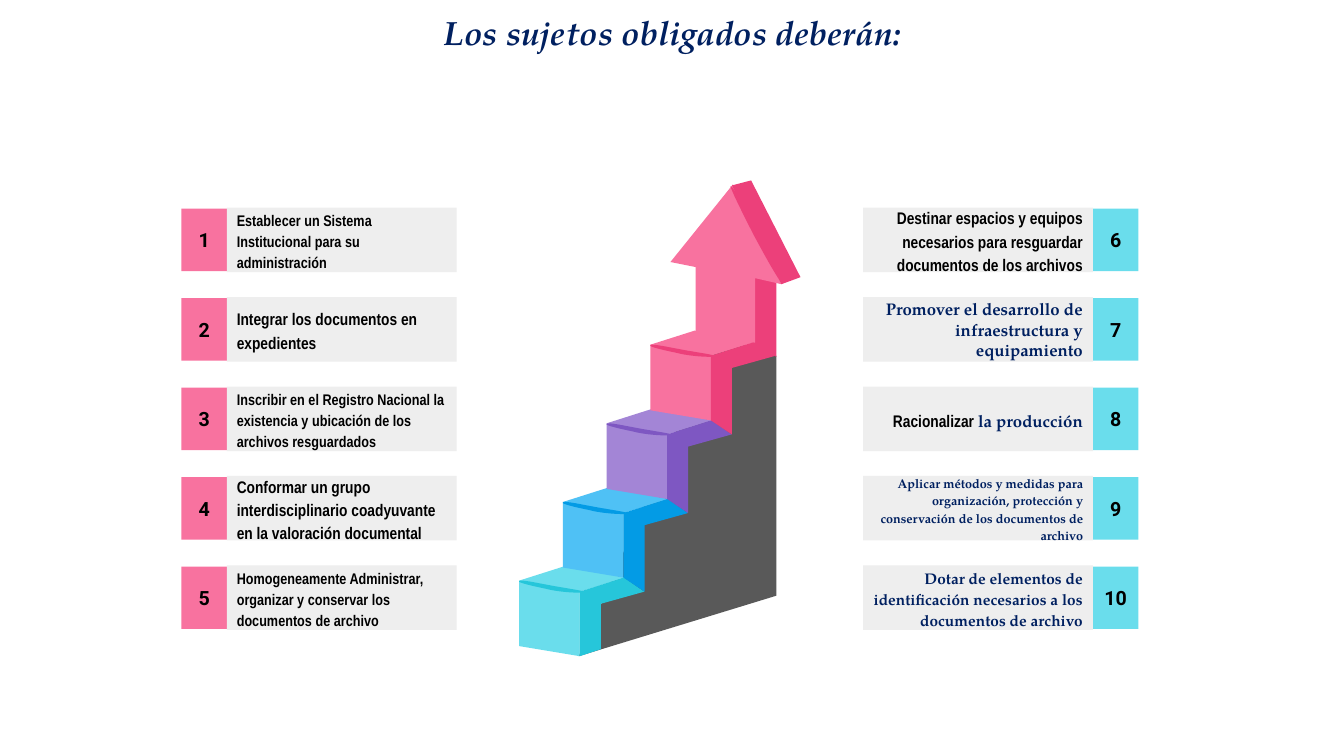
"""Build a slide with ten duties listed on both sides of a rising staircase."""
from pptx import Presentation
from pptx.dml.color import RGBColor
from pptx.enum.shapes import MSO_SHAPE as Preset
from pptx.enum.text import MSO_ANCHOR as Anchor, PP_ALIGN as Align
from pptx.util import Inches, Pt

BLACK = RGBColor(0x00, 0x00, 0x00)
NAVY = RGBColor(0x00, 0x20, 0x60)
PANEL = RGBColor(0xEE, 0xEE, 0xEE)
SHADE = RGBColor(0x59, 0x59, 0x59)
PINK, DEEP_PINK = RGBColor(0xF8, 0x72, 0x9F), RGBColor(0xEC, 0x40, 0x7A)
VIOLET, DEEP_VIOLET = RGBColor(0xA3, 0x85, 0xD6), RGBColor(0x7E, 0x57, 0xC2)
BLUE, DEEP_BLUE = RGBColor(0x4F, 0xC1, 0xF5), RGBColor(0x03, 0x9B, 0xE5)
CYAN, DEEP_CYAN = RGBColor(0x6A, 0xDD, 0xEC), RGBColor(0x26, 0xC6, 0xDA)

NARROW, SERIF, DIGITS = "Arial Narrow", "TeX Gyre Pagella", "Roboto"
ROW_TOP, ROW_PITCH = 2.07, 3.55 / 4
STEP_LEFT, STEP_TOP, STEP_RUN, STEP_RISE = 5.15, 5.76, 1.3 / 3, 0.78

LEFT_DUTIES = [
    (1.15, [("Establecer un Sistema Institucional para su administración", 11, NARROW, BLACK)]),
    (1.15, [("Integrar los documentos en expedientes", 12, NARROW, BLACK)]),
    (1.15, [("Inscribir en el Registro Nacional la existencia y ubicación de los "
             "archivos resguardados", 11, NARROW, BLACK)]),
    (1.15, [("Conformar un grupo interdisciplinario coadyuvante en la valoración "
             "documental", 12, NARROW, BLACK)]),
    (1.15, [("Homogeneamente Administrar, organizar y conservar los documentos de "
             "archivo", 11, NARROW, BLACK)]),
]
RIGHT_DUTIES = [
    (1.15, [("Destinar espacios y equipos necesarios para resguardar documentos de "
             "los archivos", 12, NARROW, BLACK)]),
    (None, [("Promover el desarrollo de infraestructura y equipamiento", 12, SERIF, NAVY)]),
    (1.15, [("Racionalizar ", 12, NARROW, BLACK), ("la producción", 12, SERIF, NAVY)]),
    (1.15, [("Aplicar métodos y medidas para organización, protección y conservación "
             "de los documentos de archivo", 9, SERIF, NAVY)]),
    (1.15, [("Dotar de elementos de identificación necesarios a los documentos de "
             "archivo", 11, SERIF, NAVY)]),
]

STEP_COLOURS = [(CYAN, DEEP_CYAN), (BLUE, DEEP_BLUE), (VIOLET, DEEP_VIOLET), (PINK, DEEP_PINK)]
FRONT = [(0, 0.65), (0, 0), (0.6, 0.11), (0.6, 0.75)]
TREAD = [(0.44, -0.14), (0, 0), (0.6, 0.11), (1.05, -0.03)]
SIDE = [(1.04, -0.03), (0.6, 0.11), (0.6, 0.75), (0.81, 0.89), (0.81, 0.23), (1.24, 0.11)]
FIRST_SIDE = SIDE[:3] + [(0.81, 0.68)] + SIDE[4:]
STEP_CREASE = [
    (0.02, 0), (0.01, 0), (0, 0), (0, 0.01), (0, 0.02), (0.11, 0.05), (0.26, 0.08),
    (0.37, 0.11), (0.52, 0.12), (0.6, 0.12), (0.62, 0.12), (0.64, 0.12), (0.64, 0.11),
    (0.64, 0.1), (0.42, 0.07), (0.27, 0.04), (0.16, 0.02), (0.07, 0), (0.02, 0),
]
STAIR_SHADE = [(7.7, 3.53), (7.7, 5.91), (5.74, 6.51), (7.11, 3.33)]
ARROW_SHAFT_SIDE = [(7.49, 3.4), (7.49, 2.76), (7.7, 2.75), (7.7, 3.54)]
ARROW_FRONT = [(7.75, 2.82), (7.27, 1.83), (6.65, 2.6), (6.9, 2.65),
               (6.9, 3.29), (7.49, 3.4), (7.49, 2.76)]
ARROW_HEAD_SIDE = [(7.94, 2.75), (7.75, 2.82), (7.26, 1.84), (7.45, 1.79)]
ARROW_CREASE = [
    (7.26, 1.84), (7.25, 1.85), (7.35, 2.07), (7.48, 2.34), (7.61, 2.6), (7.73, 2.82),
    (7.75, 2.82), (7.76, 2.81), (7.66, 2.59), (7.53, 2.32), (7.4, 2.05), (7.28, 1.84),
    (7.26, 1.84),
]


def shifted(points, dx, dy):
    """Move every point by the same offset."""
    return [(x + dx, y + dy) for x, y in points]


def curve(points, pieces=10):
    """Sample a chain of cubic Bezier curves."""
    sampled = [points[0]]
    for start in range(0, len(points) - 1, 3):
        controls = points[start:start + 4]
        for piece in range(1, pieces + 1):
            t = piece / pieces
            weights = ((1 - t) ** 3, 3 * t * (1 - t) ** 2, 3 * t * t * (1 - t), t ** 3)
            sampled.append(tuple(sum(w * p[axis] for w, p in zip(weights, controls))
                                 for axis in (0, 1)))
    return sampled


class SlideBuilder:
    """Hold the current slide and group, with a method for each kind of element."""

    def __init__(self, slide):
        """Start drawing on the given slide."""
        self.slide = slide
        self.group = None

    def new_group(self):
        """Open a group for the elements that follow."""
        self.group = self.slide.shapes.add_group_shape()

    def paint(self, shape, colour):
        """Apply a flat fill without outline or shadow."""
        shape.shadow.inherit = False
        shape.fill.solid()
        shape.fill.fore_color.rgb = colour
        shape.line.fill.background()

    def set_text(self, frame, runs, align, spacing=None, italic=None):
        """Fill a text frame run by run."""
        frame.word_wrap = True
        frame.vertical_anchor = Anchor.MIDDLE
        paragraph = frame.paragraphs[0]
        paragraph.alignment = align
        paragraph.line_spacing = spacing
        for text, size, font, colour in runs:
            run = paragraph.add_run()
            run.text = text
            run.font.size, run.font.name = Pt(size), font
            run.font.bold, run.font.italic = True, italic
            run.font.color.rgb = colour

    def title(self, text):
        """Add the slide heading."""
        heading = self.slide.shapes.add_textbox(Inches(2.17), Inches(0.1), Inches(9), Inches(0.48))
        self.set_text(heading.text_frame, [(text, 24, SERIF, NAVY)], Align.CENTER, 0.9, True)

    def box(self, left, top, width, height, colour, runs, align, spacing=None):
        """Add a filled rectangle with text."""
        panel = self.group.shapes.add_shape(
            Preset.RECTANGLE, Inches(left), Inches(top), Inches(width), Inches(height))
        self.paint(panel, colour)
        frame = panel.text_frame
        frame.margin_left = frame.margin_right = Inches(0.1)
        frame.margin_top = frame.margin_bottom = Inches(0.1)
        self.set_text(frame, runs, align, spacing)

    def duties(self, entries, first, badge_left, panel_left, colour, align):
        """Add one column of numbered duties."""
        for row, (spacing, runs) in enumerate(entries):
            top = ROW_TOP + row * ROW_PITCH
            self.box(badge_left, top, 0.45, 0.62, colour,
                     [(str(first + row), 14, DIGITS, BLACK)], Align.CENTER)
            self.box(panel_left, top - 0.01, 2.28, 0.64, PANEL, runs, align, spacing)

    def polygon(self, points, colour, rotation=0):
        """Add a closed outline through points in inches."""
        corners = [(Inches(x), Inches(y)) for x, y in points]
        outline = self.group.shapes.build_freeform(*corners[0], scale=1.0)
        outline.add_line_segments(corners[1:], close=True)
        face = outline.convert_to_shape()
        self.paint(face, colour)
        face.rotation = rotation

    def staircase(self):
        """Add the four steps and the arrow that rises from the last."""
        self.polygon(STAIR_SHADE, SHADE)
        offsets = [(STEP_LEFT + i * STEP_RUN, STEP_TOP - i * STEP_RISE)
                   for i in range(len(STEP_COLOURS))]
        for i, (offset, (light, deep)) in enumerate(zip(offsets, STEP_COLOURS)):
            self.polygon(shifted(FRONT, *offset), light)
            self.polygon(shifted(TREAD, *offset), light)
            self.polygon(shifted(SIDE if i else FIRST_SIDE, *offset), deep)
        self.polygon(ARROW_SHAFT_SIDE, DEEP_PINK)
        self.polygon(ARROW_FRONT, PINK)
        self.polygon(ARROW_HEAD_SIDE, DEEP_PINK)
        self.polygon(curve(ARROW_CREASE), DEEP_PINK, 358.5)
        for offset, (_, deep) in zip(offsets, STEP_COLOURS):
            self.polygon(curve(shifted(STEP_CREASE, *offset)), deep)


def main():
    """Create and save the presentation."""
    deck = Presentation()
    deck.slide_width, deck.slide_height = Inches(13.33), Inches(7.5)
    builder = SlideBuilder(deck.slides.add_slide(deck.slide_layouts[6]))
    builder.new_group()
    builder.duties(RIGHT_DUTIES, 6, 10.84, 8.56, CYAN, Align.RIGHT)
    builder.duties(LEFT_DUTIES, 1, 1.8, 2.25, PINK, Align.LEFT)
    builder.title("Los sujetos obligados deberán:")
    builder.new_group()
    builder.staircase()
    deck.save("out.pptx")


if __name__ == "__main__":
    main()
